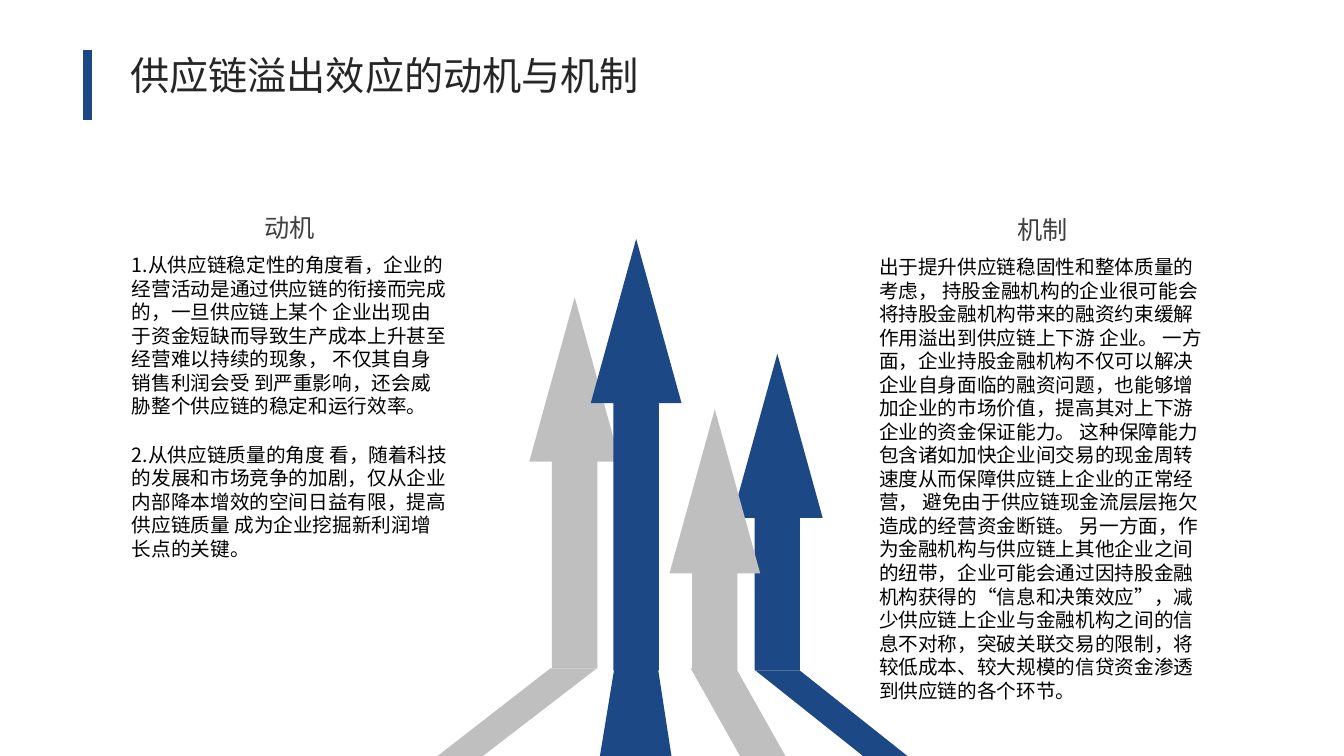
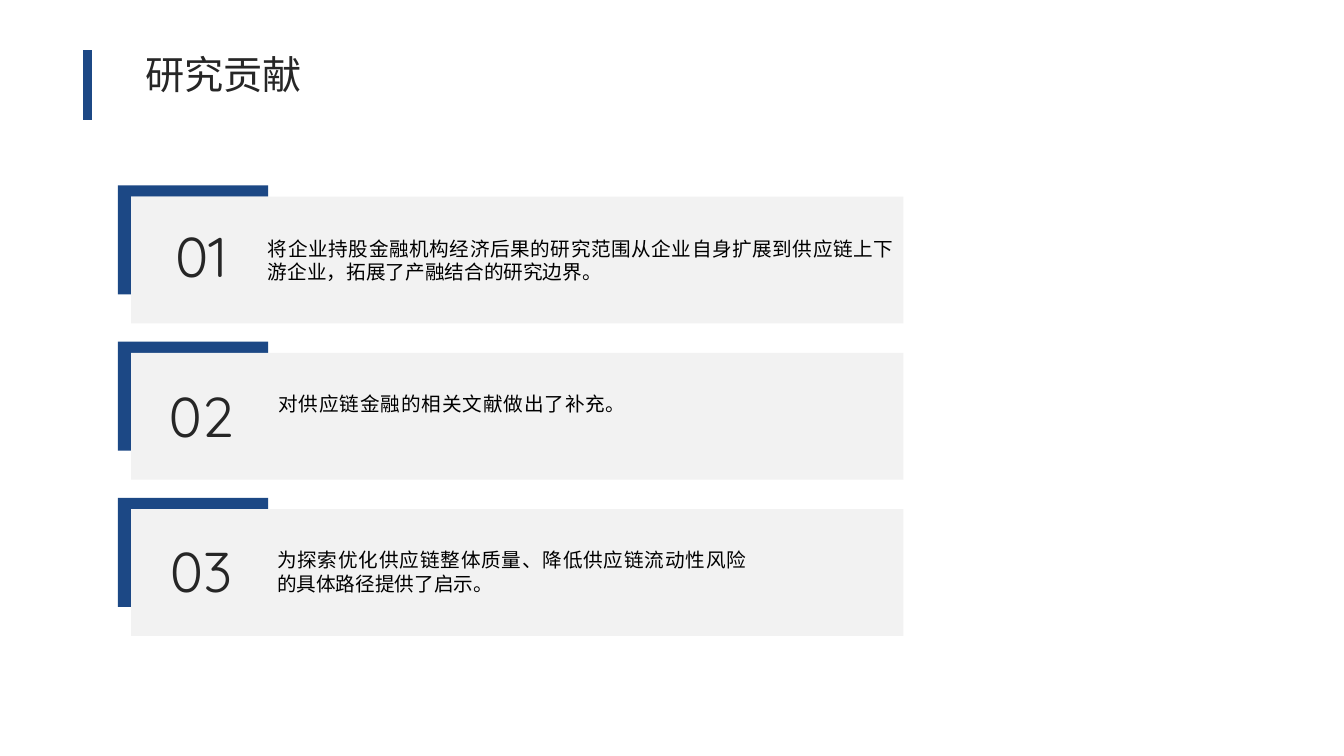
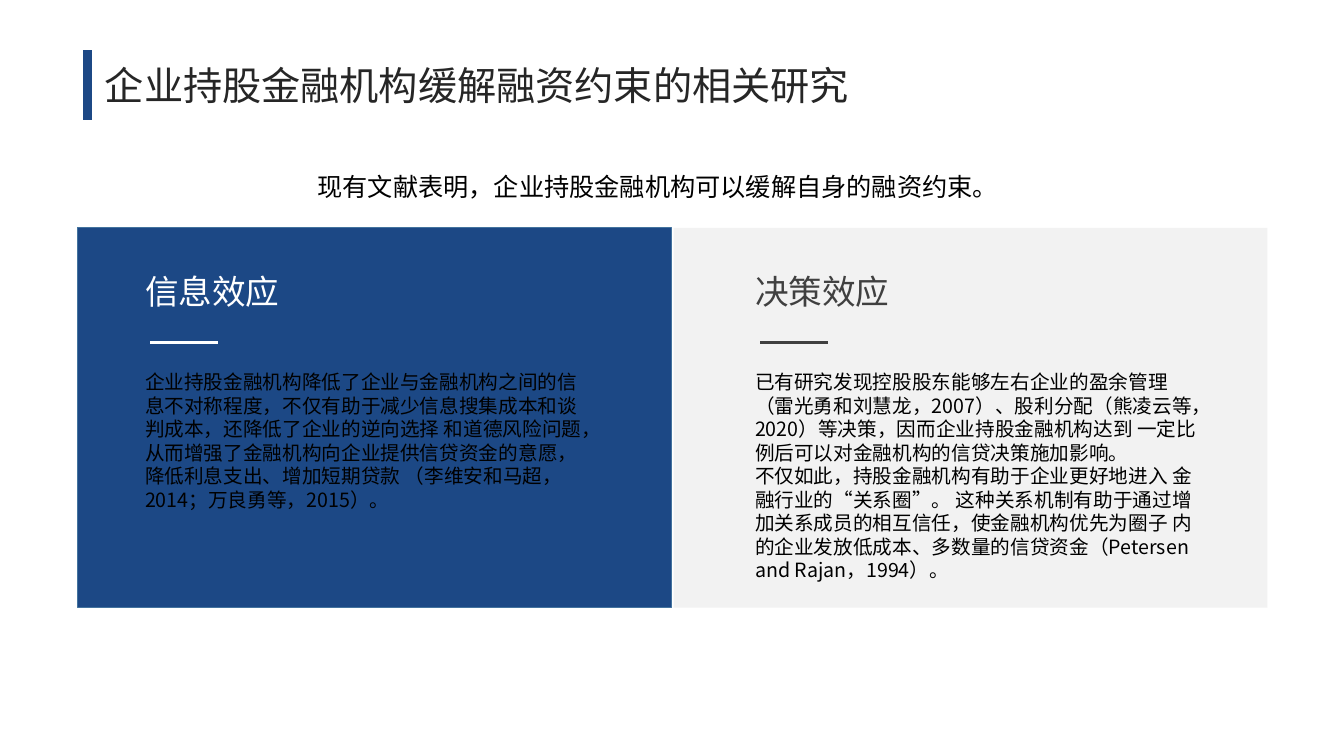
from lxml.etree import SubElement
from pptx import Presentation
from pptx.dml.color import RGBColor
from pptx.enum.shapes import MSO_CONNECTOR, MSO_SHAPE
from pptx.enum.text import MSO_ANCHOR, MSO_AUTO_SIZE, PP_ALIGN
from pptx.oxml.ns import qn
from pptx.util import Inches, Pt

BLUE, GREY, PALE = "1C4885", "BFBFBF", "F2F2F2"
BLACK, DARK, HEADING, WHITE = "000000", "262626", "404040", "FFFFFF"
HEAD_FONT, BODY_FONT, NUMBER_FONT = "Lato", "Noto Sans CJK SC", "Quicksand"
LEFT, CENTER, JUSTIFY = PP_ALIGN.LEFT, PP_ALIGN.CENTER, PP_ALIGN.JUSTIFY


def write(shape, box, text, size=14, font=BODY_FONT, color=BLACK, align=LEFT):
    """Place a text shape (left, top, width, height in inches) and format its text."""
    shape.left, shape.top, shape.width, shape.height = map(Inches, box)
    text_frame = shape.text_frame
    text_frame.text = text
    text_frame.word_wrap = True
    text_frame.auto_size = MSO_AUTO_SIZE.NONE
    text_frame.vertical_anchor = MSO_ANCHOR.TOP
    for paragraph in text_frame.paragraphs:
        paragraph.alignment = align
        if font == BODY_FONT:
            paragraph.line_spacing = Pt(size * 1.2)
        for run in paragraph.runs:
            run.font.size = Pt(size)
            run.font.name = font
            run.font.color.rgb = RGBColor.from_string(color)
            # East Asian characters need their own typeface entry
            SubElement(run.font._element, qn("a:ea")).set("typeface", font)


def paint(shape, fill, line=None):
    """Give a shape a flat fill and an optional one-point outline."""
    shape.shadow.inherit = False
    shape.fill.solid()
    shape.fill.fore_color.rgb = RGBColor.from_string(fill)
    if line:
        shape.line.color.rgb = RGBColor.from_string(line)
        shape.line.width = Pt(1)
    else:
        shape.line.fill.background()


presentation = Presentation()
presentation.slide_width, presentation.slide_height = Inches(13.33), Inches(7.5)

# Slides with their titles; the bar beside each title is shared
titles = [
    ("供应链溢出效应的动机与机制", (0.87, 0.46, 5.89, 0.57), CENTER),
    ("研究贡献", (0.66, 0.45, 3.11, 0.57), CENTER),
    ("企业持股金融机构缓解融资约束的相关研究", (0.94, 0.56, 8.75, 0.57), LEFT),
]
slides, lines = [], []
for title, box, align in titles:
    slide = presentation.slides.add_slide(presentation.slide_layouts[5])
    write(slide.shapes.title, box, title, 28, HEAD_FONT, DARK, align)
    slides.append(slide)
    lines.append((slide, (0.87, 0.5, 0.87, 1.19), BLUE, 6))
motive_slide, contribution_slide, research_slide = slides

# Slide 1: arrows, back to front
arrows = [
    (5.25, 2.95, 3.68, GREY),
    (7.26, 3.51, 3.14, BLUE),
    (6.64, 4.06, 2.59, GREY),
    (5.86, 2.37, 4.28, BLUE),
]
for left, top, height, color in arrows:
    arrow = motive_slide.shapes.add_shape(
        MSO_SHAPE.UP_ARROW, Inches(left), Inches(top), Inches(0.9), Inches(height))
    arrow.adjustments[0], arrow.adjustments[1] = 0.5, 1.81
    paint(arrow, color)

# Slide 1: roots from the arrow shafts down to the slide edge
roots = [
    (6.63, 5.46, 5.92, 4.79, 4.34, GREY),
    (6.65, 7.49, 7.93, 9.0, 8.56, BLUE),
    (6.59, 6.1, 6.52, 6.66, 5.95, BLUE),
    (6.63, 6.85, 7.3, 7.79, 7.34, GREY),
]
for top, top_left, top_right, bottom_right, bottom_left, color in roots:
    builder = motive_slide.shapes.build_freeform(Inches(top_left), Inches(top))
    builder.add_line_segments([
        (Inches(top_right), Inches(top)),
        (Inches(bottom_right), Inches(7.5)),
        (Inches(bottom_left), Inches(7.5)),
    ], close=True)
    paint(builder.convert_to_shape(), color)

# Slide 1: headings and texts
for heading, left, top in [("动机", 1.66, 2.06), ("机制", 9.13, 2.08)]:
    write(motive_slide.shapes.add_textbox(0, 0, 0, 0), (left, top, 2.43, 0.4),
          heading, 18, HEAD_FONT, HEADING, CENTER)

motive_texts = [
    ((1.21, 2.46, 3.33, 1.75),
     "1.从供应链稳定性的角度看，企业的经营活动是通过供应链的衔接而完成的，"
     "一旦供应链上某个 企业出现由于资金短缺而导致生产成本上升甚至经营难以持续的现象， "
     "不仅其自身销售利润会受 到严重影响，还会威胁整个供应链的稳定和运行效率。"),
    ((1.21, 4.34, 3.33, 1.28),
     "2.从供应链质量的角度 看，随着科技的发展和市场竞争的加剧，"
     "仅从企业内部降本增效的空间日益有限，提高供应链质量 成为企业挖掘新利润增长点的关键。"),
    ((8.62, 2.48, 3.45, 4.58),
     "出于提升供应链稳固性和整体质量的考虑， 持股金融机构的企业很可能会将持股金融机构"
     "带来的融资约束缓解作用溢出到供应链上下游 企业。 一方面，企业持股金融机构不仅可以"
     "解决企业自身面临的融资问题，也能够增加企业的市场价值，提高其对上下游企业的资金保证能力。 "
     "这种保障能力包含诸如加快企业间交易的现金周转速度从而保障供应链上企业的正常经营， "
     "避免由于供应链现金流层层拖欠造成的经营资金断链。 另一方面，作为金融机构与供应链上"
     "其他企业之间的纽带，企业可能会通过因持股金融机构获得的“信息和决策效应”，"
     "减少供应链上企业与金融机构之间的信息不对称，突破关联交易的限制，"
     "将较低成本、较大规模的信贷资金渗透到供应链的各个环节。"),
]
for box, text in motive_texts:
    write(motive_slide.shapes.add_textbox(0, 0, 0, 0), box, text)

# Slide 2: numbered cards with a blue corner
contributions = [
    (2.15, (2.56, 2.3, 6.4, 0.57),
     "将企业持股金融机构经济后果的研究范围从企业自身扩展到供应链上下游企业，"
     "拓展了产融结合的研究边界。"),
    (3.74, (2.66, 3.84, 3.45, 0.34), "对供应链金融的相关文献做出了补充。"),
    (5.27, (2.65, 5.39, 4.85, 0.57),
     "为探索优化供应链整体质量、降低供应链流动性风险的具体路径提供了启示。"),
]
for index, (number_top, box, text) in enumerate(contributions):
    card_top = 1.95 + index * 1.55
    parts = [
        (1.17, card_top - 0.11, 0.13, 1.08, BLUE),
        (1.3, card_top - 0.11, 1.36, 0.11, BLUE),
        (1.3, card_top, 7.66, 1.26, PALE),
    ]
    for left, top, width, height, color in parts:
        part = contribution_slide.shapes.add_shape(
            MSO_SHAPE.RECTANGLE, Inches(left), Inches(top), Inches(width), Inches(height))
        paint(part, color)
    write(contribution_slide.shapes.add_textbox(0, 0, 0, 0), (1.43, number_top, 1.13, 0.77),
          f"{index + 1:02d}", 40, NUMBER_FONT, DARK, CENTER)
    write(contribution_slide.shapes.add_textbox(0, 0, 0, 0), box, text, align=JUSTIFY)

# Slide 3: lead sentence and two panels
write(research_slide.shapes.add_textbox(0, 0, 0, 0), (3.05, 1.65, 7.26, 0.71),
      "现有文献表明，企业持股金融机构可以缓解自身的融资约束。", 18)

panels = [
    (0.77, 1.34, BLUE, "43739E", WHITE, "信息效应",
     "企业持股金融机构降低了企业与金融机构之间的信息不对称程度，"
     "不仅有助于减少信息搜集成本和谈判成本，还降低了企业的逆向选择 和道德风险问题，"
     "从而增强了金融机构向企业提供信贷资金的意愿，降低利息支出、增加短期贷款 "
     "（李维安和马超，2014；万良勇等，2015）。"),
    (6.68, 7.39, PALE, None, HEADING, "决策效应",
     "已有研究发现控股股东能够左右企业的盈余管理（雷光勇和刘慧龙，2007）、"
     "股利分配（熊凌云等，2020）等决策，因而企业持股金融机构达到 "
     "一定比例后可以对金融机构的信贷决策施加影响。\n"
     "不仅如此，持股金融机构有助于企业更好地进入 金融行业的“关系圈”。 "
     "这种关系机制有助于通过增加关系成员的相互信任，使金融机构优先为圈子 "
     "内的企业发放低成本、多数量的信贷资金（Petersen and Rajan，1994）。"),
]
for panel_left, text_left, fill, outline, accent, heading, text in panels:
    panel = research_slide.shapes.add_shape(
        MSO_SHAPE.RECTANGLE, Inches(panel_left), Inches(2.26), Inches(5.89), Inches(3.77))
    paint(panel, fill, outline)
    write(research_slide.shapes.add_textbox(0, 0, 0, 0), (text_left, 2.64, 4.41, 0.5),
          heading, 24, HEAD_FONT, accent)
    write(research_slide.shapes.add_textbox(0, 0, 0, 0), (text_left, 3.62, 4.64, 2.32), text)
    rule_left = text_left + 0.15
    lines.append((research_slide, (rule_left, 3.4, rule_left + 0.67, 3.4), accent, 2))

# Title bars and heading rules
for slide, ends, color, width in lines:
    connector = slide.shapes.add_connector(MSO_CONNECTOR.STRAIGHT, *map(Inches, ends))
    connector.line.color.rgb = RGBColor.from_string(color)
    connector.line.width = Pt(width)
    SubElement(connector.element.spPr, qn("a:effectLst"))

presentation.save("out.pptx")
